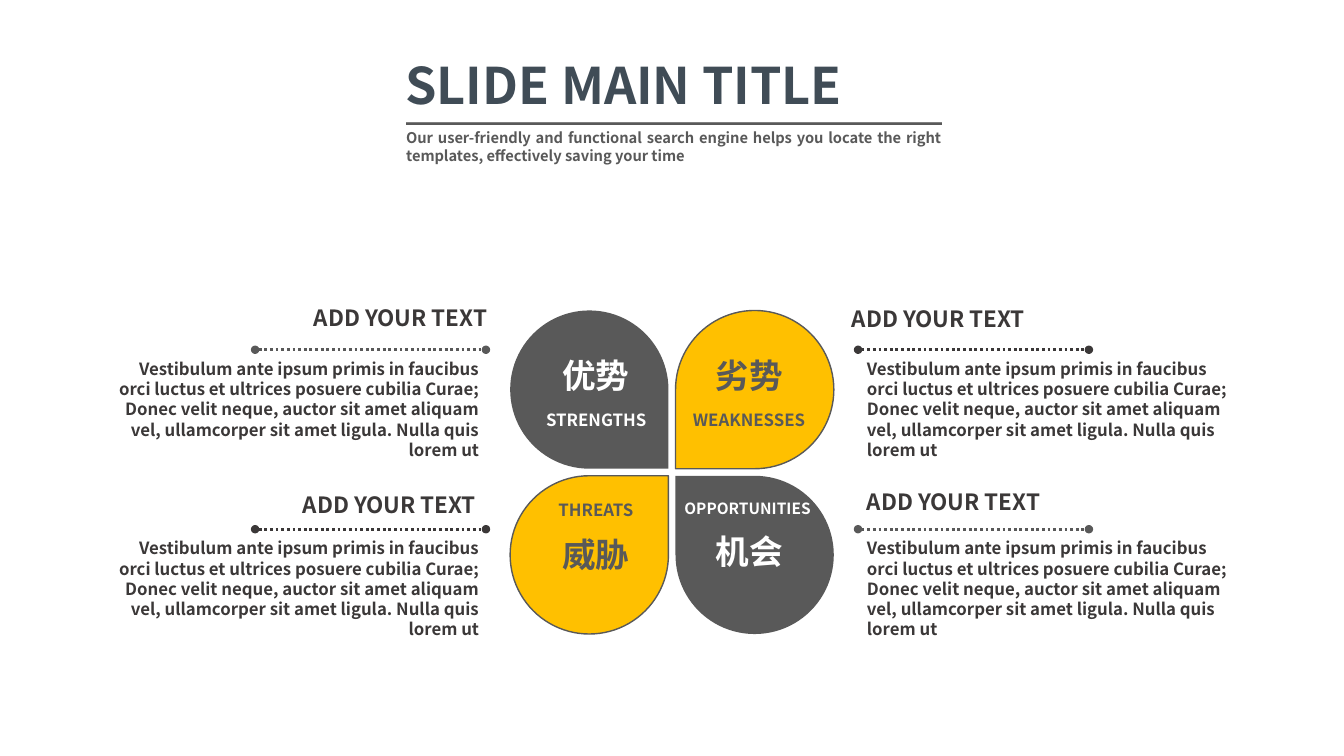
from dataclasses import dataclass

from lxml import etree
from pptx import Presentation
from pptx.dml.color import RGBColor
from pptx.enum.dml import MSO_LINE
from pptx.enum.shapes import MSO_CONNECTOR, MSO_SHAPE
from pptx.enum.text import MSO_ANCHOR, MSO_AUTO_SIZE as AUTO, PP_ALIGN as AL
from pptx.oxml.ns import qn
from pptx.util import Inches, Pt

FONT = "Noto Sans CJK SC"
WHITE, GRAY, INK, YELLOW = "FFFFFF", "595959", "3B3838", "FFC000"
HEADING = "ADD YOUR TEXT"
BODY = ("Vestibulum ante ipsum primis in faucibus orci luctus et ultrices "
        "posuere cubilia Curae; Donec velit neque, auctor sit amet aliquam "
        "vel, ullamcorper sit amet ligula. Nulla quis lorem ut")
SUBTITLE = ("Our user-friendly and functional search engine helps you locate "
            "the right templates, effectively saving your time")

# Two-by-two grid
PETAL, PETAL_X, PETAL_Y, PETAL_STEP = 1.57, 5.06, 3.08, 1.64
ROW_Y, ROW_STEP = 3.47, 1.78
RULE_W, BODY_W, BODY_H = 2.29, 3.91, 1.11

Box = tuple[float, float, float, float]


@dataclass(frozen=True)
class Petal:
    col: int
    row: int
    rotation: int
    label: str
    label_box: Box
    label_size: int
    word: str
    word_xy: tuple[float, float]


@dataclass(frozen=True)
class Note:
    col: int
    row: int
    rule_color: str
    heading_box: Box


DARK_PETALS = [
    Petal(0, 0, 90, "STRENGTHS", (5.3, 4.02, 1.23, 0.3), 12, "优势", (5.47, 3.47)),
    Petal(1, 1, 270, "OPPORTUNITIES", (6.67, 4.9, 1.49, 0.29), 11, "机会", (6.99, 5.22)),
]
YELLOW_PETALS = [
    Petal(0, 1, 0, "THREATS", (5.42, 4.91, 0.98, 0.3), 12, "威胁", (5.47, 5.25)),
    Petal(1, 0, 180, "WEAKNESSES", (6.75, 4.02, 1.36, 0.3), 12, "劣势", (6.99, 3.47)),
]
NOTES = [
    Note(0, 0, GRAY, (2.58, 2.97, 2.35, 0.37)),
    Note(0, 1, INK, (2.15, 4.82, 2.67, 0.37)),
    Note(1, 0, INK, (8.35, 2.98, 2.36, 0.37)),
    Note(1, 1, GRAY, (8.5, 4.79, 2.56, 0.37)),
]


def rgb(color: str) -> RGBColor:
    return RGBColor.from_string(color)


def set_text(sp, text: str, size: float, color: str, align: AL, wrap: bool = True) -> None:
    tf = sp.text_frame
    tf.text = text
    frame = {"word_wrap": wrap, "auto_size": AUTO.SHAPE_TO_FIT_TEXT,
             "vertical_anchor": MSO_ANCHOR.TOP}
    for name, value in frame.items():
        setattr(tf, name, value)
    p = tf.paragraphs[0]
    p.alignment = align
    p.line_spacing = Pt(size * 1.2)
    r = p.runs[0]
    for name, value in {"name": FONT, "size": Pt(size), "bold": True}.items():
        setattr(r.font, name, value)
    r.font.color.rgb = rgb(color)
    etree.SubElement(r.font._element, qn("a:ea")).set("typeface", FONT)


def add_text(shapes, box: Box, text: str, size: float, color: str,
             align: AL, wrap: bool = True) -> None:
    sp = shapes.add_textbox(*map(Inches, box))
    set_text(sp, text, size, color, align, wrap)


def add_rule(shapes, x: float, y: float, width: float, color: str,
             weight: float, dotted: bool = False) -> None:
    line = shapes.add_connector(MSO_CONNECTOR.STRAIGHT, Inches(x), Inches(y),
                                Inches(x + width), Inches(y))
    line.line.color.rgb = rgb(color)
    line.line.width = Pt(weight)
    if dotted:
        line.line.dash_style = MSO_LINE.ROUND_DOT
        ln = line.line._get_or_add_ln()
        for end in ("a:headEnd", "a:tailEnd"):
            etree.SubElement(ln, qn(end)).set("type", "oval")
    etree.SubElement(line._element.spPr, qn("a:effectLst"))


def add_petals(shapes, petals: list[Petal], fill: str, text_color: str, outlined: bool) -> None:
    group = shapes.add_group_shape().shapes
    for petal in petals:
        sp = group.add_shape(MSO_SHAPE.TEAR,
                             Inches(PETAL_X + petal.col * PETAL_STEP),
                             Inches(PETAL_Y + petal.row * PETAL_STEP),
                             Inches(PETAL), Inches(PETAL))
        sp.rotation = petal.rotation
        sp.shadow.inherit = False
        sp.fill.solid()
        sp.fill.fore_color.rgb = rgb(fill)
        if outlined:
            sp.line.color.rgb = rgb(GRAY)
            sp.line.width = Pt(1)
        else:
            sp.line.fill.background()
        add_text(group, petal.label_box, petal.label, petal.label_size,
                 text_color, AL.CENTER, wrap=False)
        add_text(group, (*petal.word_xy, 0.88, 0.5), petal.word, 24,
                 text_color, AL.CENTER, wrap=False)


def add_note(shapes, note: Note) -> None:
    rule_x, body_x = ((2.53, 0.94), (8.51, 8.5))[note.col]
    align = (AL.RIGHT, AL.LEFT)[note.col]
    y = ROW_Y + note.row * ROW_STEP
    add_rule(shapes, rule_x, y, RULE_W, note.rule_color, 2, dotted=True)
    add_text(shapes, (body_x, y + 0.04, BODY_W, BODY_H), BODY, 12, INK, align)
    add_text(shapes, note.heading_box, HEADING, 16, INK, align)


def main() -> None:
    prs = Presentation()
    prs.slide_width, prs.slide_height = Inches(13.33), Inches(7.5)
    s = prs.slides.add_slide(prs.slide_layouts[5])

    # Title block
    title = s.shapes.title
    for name, value in zip(("left", "top", "width", "height"), (3.92, 0.49, 5.53, 0.71)):
        setattr(title, name, Inches(value))
    set_text(title, "SLIDE MAIN TITLE", 36, "404C56", AL.JUSTIFY)
    add_text(s.shapes, (3.93, 1.23, 5.51, 0.47), SUBTITLE, 10.5, GRAY, AL.JUSTIFY)
    for y, color in ((1.22, "808080"), (1.23, GRAY)):
        add_rule(s.shapes, 4.03, y, 5.31, color, 1)

    # Petals
    add_petals(s.shapes, DARK_PETALS, GRAY, WHITE, outlined=False)
    add_petals(s.shapes, YELLOW_PETALS, YELLOW, GRAY, outlined=True)

    # Side notes
    for note in NOTES:
        add_note(s.shapes, note)

    prs.save("out.pptx")


if __name__ == "__main__":
    main()
